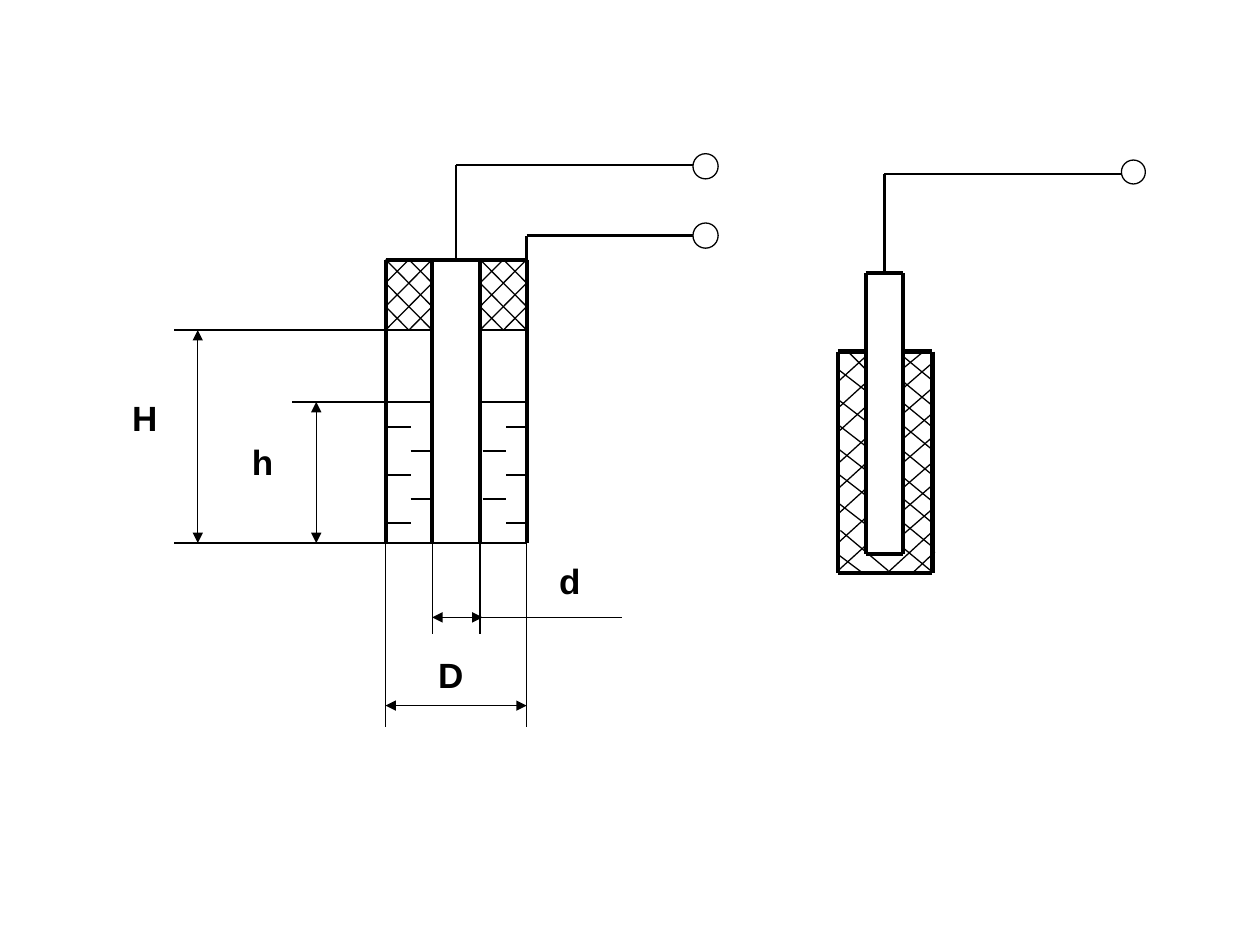
from pptx import Presentation
from pptx.dml.color import RGBColor
from pptx.enum.shapes import MSO_CONNECTOR, MSO_SHAPE
from pptx.oxml.ns import qn
from pptx.util import Inches, Pt
from lxml import etree

STRAIGHT = MSO_CONNECTOR.STRAIGHT
OVAL = MSO_SHAPE.OVAL

THEME = {
    "ink": RGBColor(0, 0, 0),
    "paper": RGBColor(255, 255, 255),
    "label": {"name": "Arial", "size": Pt(20), "bold": True},
    "thin": 0.75,
    "wire": 1.5,
    "wall": 2.25,
    "casing": 2.5,
}

deck = Presentation()
deck.slide_width = Inches(10)
deck.slide_height = Inches(7.5)
page = deck.slides.add_slide(deck.slide_layouts[6])


def draw_line(x1, y1, x2, y2, weight="thin", arrows=False):
    line = page.shapes.add_connector(
        STRAIGHT, Inches(x1), Inches(y1), Inches(x2), Inches(y2)
    )
    line.line.color.rgb = THEME["ink"]
    line.line.width = Pt(THEME[weight])
    properties = line._element.spPr
    etree.SubElement(properties, qn("a:effectLst"))
    if arrows:
        outline = properties.find(qn("a:ln"))
        for end in ("a:headEnd", "a:tailEnd"):
            etree.SubElement(outline, qn(end), type="triangle")


# Coaxial sensor
tube_left, rod_left, rod_right, tube_right = walls = (3.06, 3.43, 3.81, 4.18)
top, plug_bottom, level, bottom = 2.06, 2.62, 3.19, 4.31
gaps = ((tube_left, rod_left), (rod_right, tube_right))

for x in walls:
    draw_line(x, top, x, bottom, "wall")
draw_line(tube_left, top, tube_right, top, "wall")
draw_line(tube_left, bottom, tube_right, bottom)

hatch = ((1, 0, 0, 1), (2, 0, 0, 2), (2, 1, 0, 3), (2, 2, 1, 3))
cell_height = (plug_bottom - top) / 3
for left, right in gaps:
    cell_width = (right - left) / 2
    for y in (plug_bottom, level):
        draw_line(left, y, right, y)
    for c1, r1, c2, r2 in hatch:
        y1, y2 = top + r1 * cell_height, top + r2 * cell_height
        draw_line(left + c1 * cell_width, y1, left + c2 * cell_width, y2)
        draw_line(right - c1 * cell_width, y1, right - c2 * cell_width, y2)

left_dashes = ((3.08, 3.26), (3.26, 3.43))
right_dashes = ((4.02, 4.18), (3.83, 4.02))
for row in range(5):
    y = 3.39 + row * 0.19
    for start, end in (left_dashes[row % 2], right_dashes[row % 2]):
        draw_line(start, y, end, y)

# Dimensions
for x, y in ((1.38, plug_bottom), (1.38, bottom), (2.32, level)):
    draw_line(tube_left, y, x, y)
for x, end in zip(walls, (5.77, 5.03, 5.03, 5.77)):
    draw_line(x, 4.28, x, end)
draw_line(rod_right, 4.9, 4.94, 4.9)
for ends in (
    (2.51, level, 2.51, bottom),
    (1.57, plug_bottom, 1.57, bottom),
    (rod_left, 4.9, 3.83, 4.9),
    (tube_left, 5.6, tube_right, 5.6),
):
    draw_line(*ends, arrows=True)

for text, x, y, height in (
    ("H", 0.95, 3.1, 0.51),
    ("D", 3.38, 5.14, 0.57),
    ("h", 1.9, 3.45, 0.48),
    ("d", 4.34, 4.39, 0.48),
):
    box = page.shapes.add_textbox(Inches(x), Inches(y), Inches(0.57), Inches(height))
    box.text_frame.word_wrap = True
    span = box.text_frame.paragraphs[0].add_run()
    span.text = text
    for name, value in THEME["label"].items():
        setattr(span.font, name, value)
    span.font.color.rgb = THEME["ink"]

# Insulated rod sensor
core_left, core_right, core_top, core_bottom = 6.87, 7.17, 2.17, 4.4
case_left, case_right, case_top, case_bottom = 6.65, 7.4, 2.79, 4.55

for y in (2.93, 3.17, 3.37, 3.56, 3.76, 3.99):
    draw_line(case_left, y, core_left, y + 0.17)
for y in (3.03, 3.24, 3.43, 3.68, 3.88, 4.08, 4.31, 4.53):
    draw_line(case_left, y, core_left, y - 0.2)
for y in (2.83, 3.03, 3.2, 3.38, 3.58, 3.79, 3.96, 4.15, 4.35):
    draw_line(core_right, y, case_right, y + 0.19)
for y in (2.88, 3.08, 3.28, 3.47, 3.67, 3.85, 4.04):
    draw_line(case_right, y, core_right, y + 0.2)
for ends in (
    (6.74, 2.8, 6.87, 2.93),
    (7.33, 2.79, 7.16, 2.93),
    (6.67, 4.21, 7.05, 4.53),
    (6.65, 4.4, 6.85, 4.55),
    (7.41, 4.21, 7.05, 4.54),
    (7.42, 4.38, 7.24, 4.55),
):
    draw_line(*ends)

for x in (core_left, core_right):
    draw_line(x, core_top, x, core_bottom, "wall")
for y in (core_top, core_bottom):
    draw_line(core_left, y, core_right, y, "wall")
for case_x, core_x in ((case_left, core_left), (case_right, core_right)):
    draw_line(case_x, case_top, core_x, case_top, "casing")
    draw_line(case_x, case_top, case_x, case_bottom, "casing")
draw_line(case_left, case_bottom, case_right, case_bottom, "casing")

# Leads and terminals
for x, start, y, end, terminal_top, size in (
    (3.62, top, 1.31, 5.5, 1.22, 0.2),
    (tube_right, top, 1.87, 5.5, 1.77, 0.2),
    (7.02, core_top, 1.38, 8.9, 1.27, 0.19),
):
    draw_line(x, start, x, y, "wire")
    draw_line(x, y, end, y, "wire")
    terminal = page.shapes.add_shape(
        OVAL, Inches(end), Inches(terminal_top), Inches(size), Inches(size)
    )
    terminal.shadow.inherit = False
    terminal.fill.solid()
    terminal.fill.fore_color.rgb = THEME["paper"]
    terminal.line.color.rgb = THEME["ink"]
    terminal.line.width = Pt(THEME["thin"])

deck.save("out.pptx")
